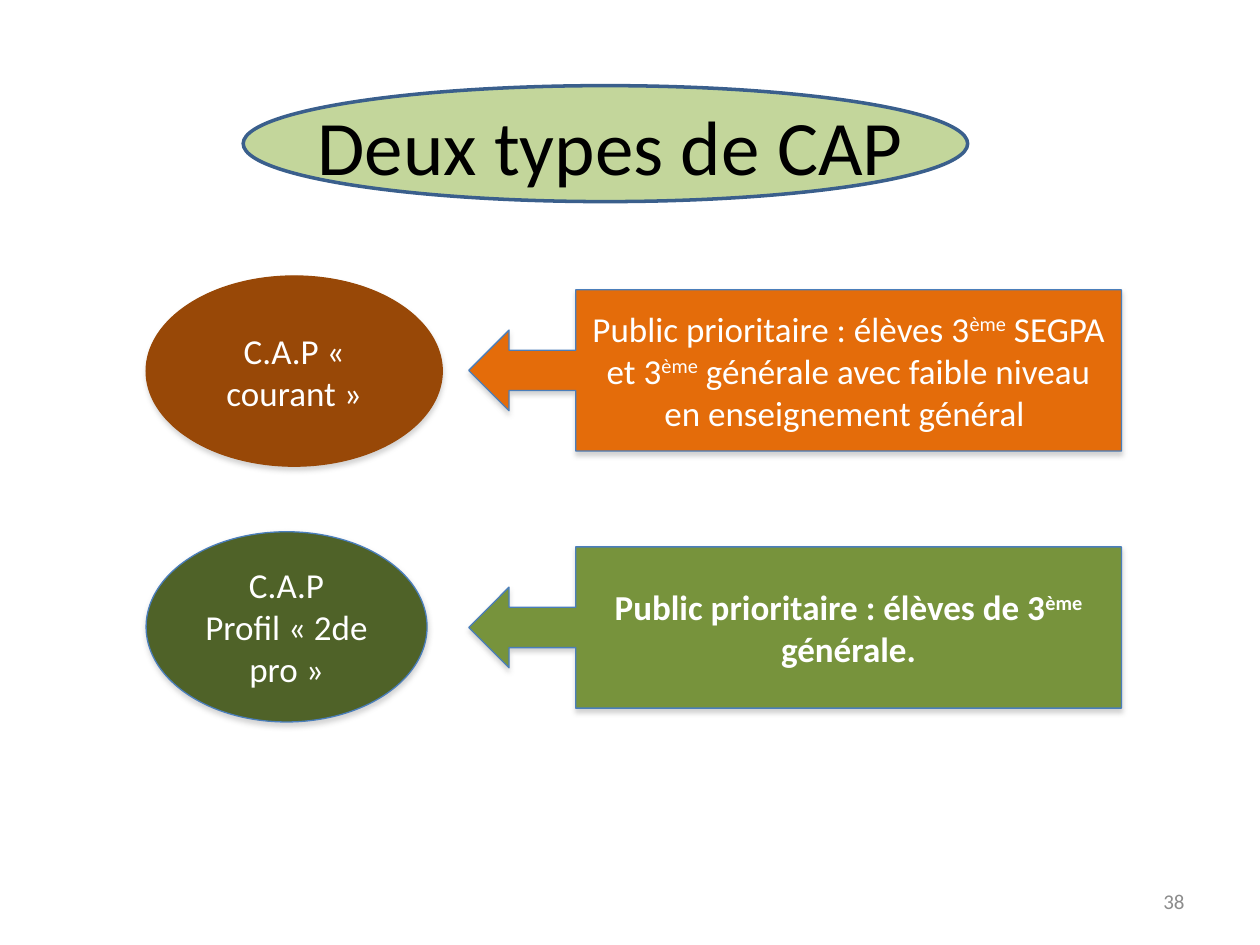
import pptx
import pptx.util
import pptx.dml.color
import pptx.enum.shapes
import pptx.enum.text
import pptx.oxml
import pptx.oxml.ns

Inches = pptx.util.Inches
Pt = pptx.util.Pt
Kind = pptx.enum.shapes.MSO_SHAPE
Align = pptx.enum.text.PP_ALIGN

COLORS = {
    "mint": "C3D69B", "navy": "3A5F8C", "blue": "4A7EBB",
    "orange": "E46C0A", "green": "77933C", "brown": "984807",
    "olive": "4F6228", "white": "FFFFFF", "black": "000000",
    "gray": "8C8C8C", "shade": "808080",
}


def color(name):
    return pptx.dml.color.RGBColor.from_string(COLORS[name])


def place(shape, box):
    shape.left, shape.top, shape.width, shape.height = map(Inches, box)


def write(shape, lines, size, ink, align=Align.CENTER, bold=False):
    frame = shape.text_frame
    frame.word_wrap = True
    frame.vertical_anchor = pptx.enum.text.MSO_ANCHOR.MIDDLE
    for row, line in enumerate(lines):
        para = frame.add_paragraph() if row else frame.paragraphs[0]
        para.alignment = align
        para.font.name = "Calibri"
        para.font.size = Pt(size)
        para.font.bold = bold
        para.font.color.rgb = color(ink)
        for part, text in enumerate(line.split("^")):
            run = para.add_run()
            run.text = text
            if part % 2:
                run.font._element.set("baseline", "30000")


def draw(slide, kind, box, fill, edge, width=0.75):
    shape = slide.shapes.add_shape(kind, *map(Inches, box))
    shape.fill.solid()
    shape.fill.fore_color.rgb = color(fill)
    shape.line.color.rgb = color(edge)
    shape.line.width = Pt(width)
    shape.shadow.inherit = False
    return shape


def shade(shape):
    effects = shape._element.spPr.find(pptx.oxml.ns.qn("a:effectLst"))
    effects.append(pptx.oxml.parse_xml(
        f'<a:outerShdw {pptx.oxml.ns.nsdecls("a")} blurRad="{Pt(3.1)}" '
        f'dist="{Pt(1.8)}" dir="5400000" rotWithShape="0">'
        f'<a:srgbClr val="{COLORS["shade"]}"><a:alpha val="35000"/></a:srgbClr>'
        '</a:outerShdw>'))


def add_title(slide, text):
    oval = draw(slide, Kind.OVAL, (1.93, 0.68, 5.75, 0.92), "mint", "navy", 2)
    slide.shapes._spTree.insert(2, oval._element)
    title = slide.shapes.title
    place(title, (2.17, 0.6, 5.35, 1.09))
    write(title, [text], 44, "black")


def add_callout(slide, top, fill, text, bold):
    shape = draw(slide, Kind.LEFT_ARROW_CALLOUT, (3.72, top, 5.18, 1.28), fill, "blue")
    for spot, value in enumerate((0.25, 0.25, 0.25, 0.836)):
        shape.adjustments[spot] = value
    shade(shape)
    write(shape, [text], 20, "white", bold=bold)


def add_oval(slide, top, width, fill, edge, lines):
    shape = draw(slide, Kind.OVAL, (1.16, top, width, 1.51), fill, edge)
    shade(shape)
    write(shape, lines, 20, "white")


def add_number(slide, text):
    box = slide.shapes.add_textbox(*map(Inches, (7.17, 6.95, 2.33, 0.4)))
    write(box, [text], 12, "gray", Align.RIGHT)


def main():
    deck = pptx.Presentation()
    deck.slide_width, deck.slide_height = Inches(10), Inches(7.5)
    slide = deck.slides.add_slide(deck.slide_layouts[5])
    add_title(slide, "Deux types de CAP")
    add_callout(slide, 2.3, "orange",
                "Public prioritaire : élèves 3^ème^ SEGPA et 3^ème^ générale "
                "avec faible niveau en enseignement général ", False)
    add_callout(slide, 4.34, "green",
                "Public prioritaire : élèves de 3^ème^ générale.", True)
    add_oval(slide, 2.19, 2.35, "brown", "brown", ["C.A.P « courant »"])
    add_oval(slide, 4.22, 2.23, "olive", "blue", ["C.A.P", "Profil « 2de pro »"])
    add_number(slide, "38")
    deck.save("out.pptx")


if __name__ == "__main__":
    main()
